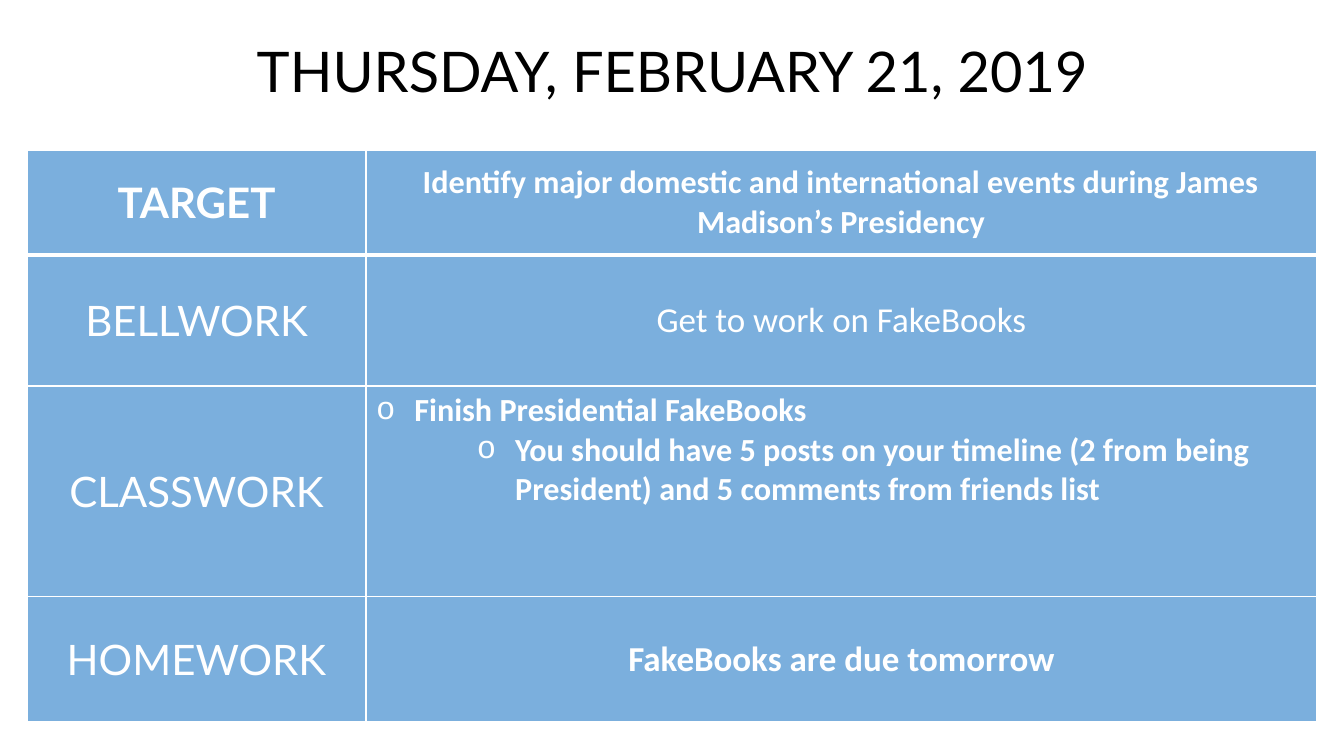
from lxml.etree import SubElement
from pptx import Presentation
from pptx.dml.color import RGBColor
from pptx.enum.shapes import MSO_SHAPE
from pptx.enum.text import MSO_ANCHOR, PP_ALIGN
from pptx.oxml.ns import qn
from pptx.util import Inches, Pt


def paint(fill, color, opacity):
    """Fill with a hex colour at an opacity given in percent."""
    fill.solid()
    fill.fore_color.rgb = RGBColor.from_string(color)
    color_xml = fill._xPr.find(qn("a:solidFill"))[0]
    SubElement(color_xml, qn("a:alpha"), val=str(opacity * 1000))


def style(paragraph, name, size, color, bold=False):
    paragraph.font.name = name
    paragraph.font.size = Pt(size)
    paragraph.font.bold = bold
    paragraph.font.color.rgb = RGBColor.from_string(color)


WHITE, BLUE, BLACK = "FFFFFF", "5B9BD5", "000000"
LEFT, WIDTH = 0.27, 12.79
COLUMN_WIDTHS = [3.36, 9.43]

# label, label bold, lines, size, bold, row height
AGENDA = [
    ("TARGET", True,
     ["Identify major domestic and international events during James Madison’s Presidency"],
     23, True, 1.04),
    ("BELLWORK", False, ["Get to work on FakeBooks"], 25, False, 1.3),
    ("CLASSWORK", False,
     ["Finish Presidential FakeBooks",
      "You should have 5 posts on your timeline (2 from being President) "
      "and 5 comments from friends list"],
     23, True, 2.09),
    ("HOMEWORK", False, ["FakeBooks are due tomorrow"], 25, True, 1.24),
]

deck = Presentation()
deck.slide_width, deck.slide_height = Inches(13.33), Inches(7.5)
slide = deck.slides.add_slide(deck.slide_layouts[6])

agenda = slide.shapes.add_table(
    len(AGENDA), 2, Inches(LEFT), Inches(1.49), Inches(WIDTH), Inches(5.67)).table
for column, width in zip(agenda.columns, COLUMN_WIDTHS):
    column.width = Inches(width)

for row, (label, label_bold, lines, size, bold, height) in enumerate(AGENDA):
    agenda.rows[row].height = Inches(height)
    entries = [([label], "Lato", 30, label_bold), (lines, "Calibri", size, bold)]
    for column, (texts, font, points, is_bold) in enumerate(entries):
        cell = agenda.cell(row, column)
        bulleted = len(texts) > 1
        cell.vertical_anchor = MSO_ANCHOR.TOP if bulleted else MSO_ANCHOR.MIDDLE
        cell.text = "\n".join(texts)
        for level, paragraph in enumerate(cell.text_frame.paragraphs):
            if bulleted:
                paragraph.level = level
                properties = paragraph._p.get_or_add_pPr()
                properties.set("marL", str(Inches(0.38 + level)))
                properties.set("indent", str(Inches(-0.38)))
                SubElement(properties, qn("a:buFont"), typeface="Courier New")
                SubElement(properties, qn("a:buChar"), char="o")
            paragraph.alignment = PP_ALIGN.LEFT if bulleted else PP_ALIGN.CENTER
            style(paragraph, font, points, WHITE, is_bold)

        cell_properties = cell._tc.get_or_add_tcPr()
        for side in ("lnL", "lnR", "lnT", "lnB"):
            under_target = (row, side) in ((0, "lnB"), (1, "lnT"))
            border = SubElement(cell_properties, qn(f"a:{side}"),
                                w=str(Pt(3 if under_target else 1)))
            SubElement(SubElement(border, qn("a:solidFill")), qn("a:srgbClr"), val=WHITE)
        paint(cell.fill, BLUE, 80)

date = slide.shapes.add_shape(
    MSO_SHAPE.RECTANGLE, Inches(LEFT), Inches(0.2), Inches(WIDTH), Inches(1))
date.shadow.inherit = False
date.line.fill.background()
paint(date.fill, WHITE, 65)
date.text_frame.text = "THURSDAY, FEBRUARY 21, 2019"
date.text_frame.vertical_anchor = MSO_ANCHOR.MIDDLE
heading = date.text_frame.paragraphs[0]
heading.alignment = PP_ALIGN.CENTER
style(heading, "Lato", 40, BLACK)

deck.save("out.pptx")
